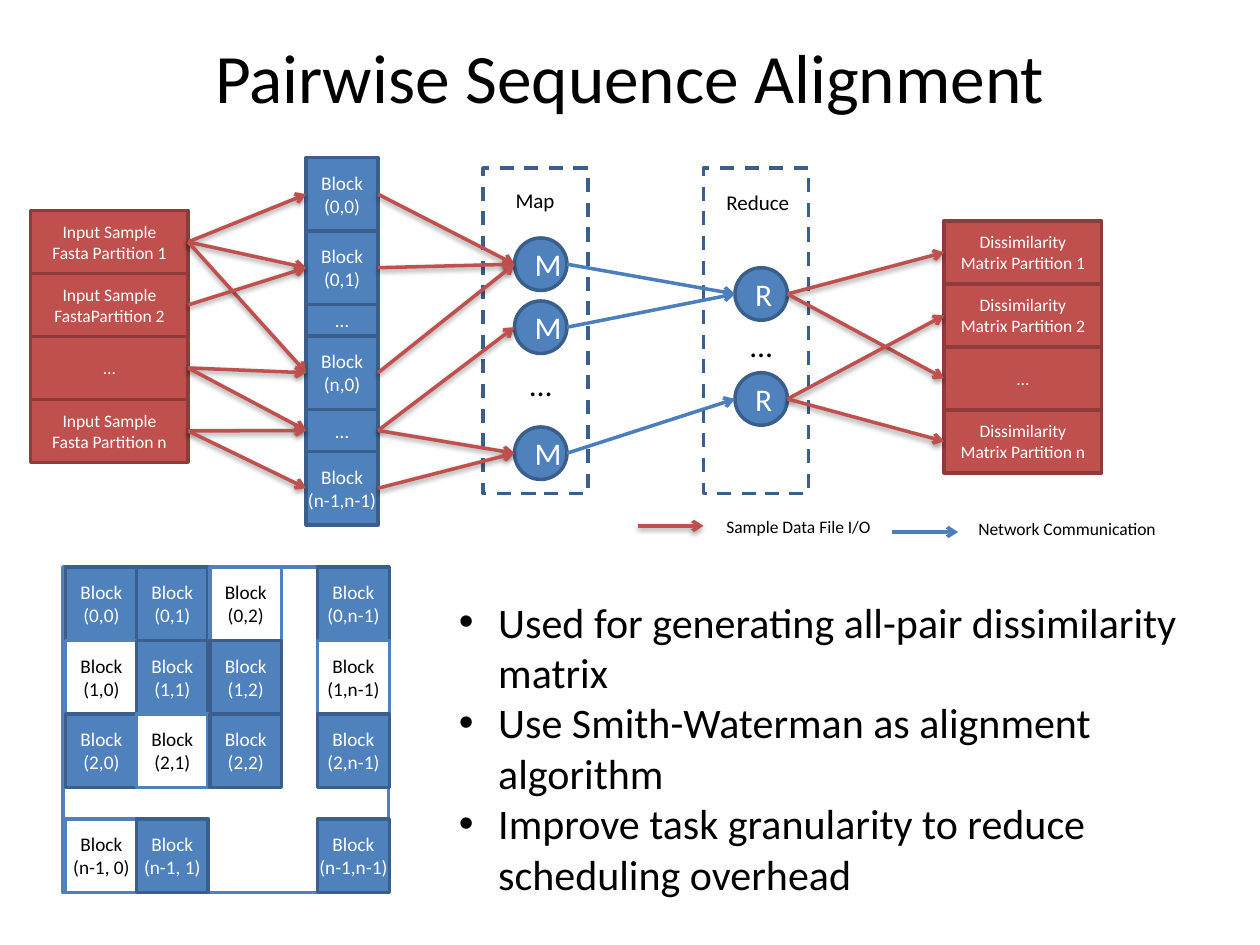
from dataclasses import dataclass

from lxml import etree
from pptx import Presentation
from pptx.dml.color import RGBColor
from pptx.enum.dml import MSO_LINE
from pptx.enum.shapes import MSO_CONNECTOR, MSO_SHAPE
from pptx.enum.text import MSO_ANCHOR, PP_ALIGN
from pptx.oxml import parse_xml
from pptx.oxml.ns import nsdecls, qn
from pptx.util import Pt

RECT, OVAL = MSO_SHAPE.RECTANGLE, MSO_SHAPE.OVAL
STRAIGHT, DASH = MSO_CONNECTOR.STRAIGHT, MSO_LINE.DASH
LEFT, CENTER = PP_ALIGN.LEFT, PP_ALIGN.CENTER
TOP, MIDDLE = MSO_ANCHOR.TOP, MSO_ANCHOR.MIDDLE


@dataclass(frozen=True)
class Theme:
    font: str = "Calibri"
    black: str = "000000"
    white: str = "FFFFFF"
    red: str = "C0504D"
    red_edge: str = "8E3B39"
    blue: str = "4F81BD"
    blue_edge: str = "3A5F8C"
    network: str = "4B7EBC"
    title: float = 39.6
    bullet: float = 24
    worker: float = 18
    stage: float = 12
    block: float = 11
    small: float = 10
    stroke: float = 2


theme = Theme()

SHADOW = (
    f'<a:effectLst {nsdecls("a")}><a:outerShdw blurRad="40000" dist="20000" '
    'dir="5400000" rotWithShape="0"><a:srgbClr val="000000">'
    '<a:alpha val="38000"/></a:srgbClr></a:outerShdw></a:effectLst>'
)

prs = Presentation()
prs.slide_width, prs.slide_height = Pt(720), Pt(540)
slide = prs.slides.add_slide(prs.slide_layouts[1])


def add_text(text, left, top, width, height, *, outline=None, fill=None, edge=None,
             dash=None, color=theme.white, size=theme.small, align=CENTER,
             anchor=MIDDLE, inset=(7.2, 3.6)):
    """Add text in a preset outline, or in a plain text box when outline is None."""
    box = [Pt(v) for v in (left, top, width, height)]
    if outline is None:
        shape = slide.shapes.add_textbox(*box)
    else:
        shape = slide.shapes.add_shape(outline, *box)
        shape.shadow.inherit = False
        shape.line.color.rgb = RGBColor.from_string(edge)
        shape.line.width = Pt(theme.stroke)
        shape.line.dash_style = dash
        if fill:
            shape.fill.solid()
            shape.fill.fore_color.rgb = RGBColor.from_string(fill)
        else:
            shape.fill.background()
    frame = shape.text_frame
    frame.word_wrap = True
    frame.vertical_anchor = anchor
    frame.margin_left = frame.margin_right = Pt(inset[0])
    frame.margin_top = frame.margin_bottom = Pt(inset[1])
    frame.text = text
    for paragraph in frame.paragraphs:
        paragraph.alignment = align
        paragraph.font.name = theme.font
        paragraph.font.size = Pt(size)
        paragraph.font.color.rgb = RGBColor.from_string(color)


def add_arrow(x1, y1, x2, y2, color, shadow=False):
    arrow = slide.shapes.add_connector(STRAIGHT, Pt(x1), Pt(y1), Pt(x2), Pt(y2))
    arrow.line.color.rgb = RGBColor.from_string(color)
    arrow.line.width = Pt(theme.stroke)
    etree.SubElement(arrow.line._get_or_add_ln(), qn("a:tailEnd"), type="arrow")
    effects = SHADOW if shadow else f'<a:effectLst {nsdecls("a")}/>'
    arrow._element.spPr.append(parse_xml(effects))


# Title and bullets
title = slide.shapes.title
title.left, title.top, title.width, title.height = Pt(36), Pt(18), Pt(648), Pt(50.4)
title.text_frame.text = "Pairwise Sequence Alignment"
title.text_frame.vertical_anchor = MIDDLE

bullets = slide.placeholders[1]
bullets.left, bullets.top = Pt(255), Pt(337)
bullets.width, bullets.height = Pt(433.5), Pt(181.5)
bullets.text_frame.text = "\n".join([
    "Used for generating all-pair dissimilarity matrix",
    "Use Smith-Waterman as alignment algorithm",
    "Improve task granularity to reduce scheduling overhead",
])
for paragraph in bullets.text_frame.paragraphs:
    paragraph.space_before = Pt(0)
    properties = paragraph._p.get_or_add_pPr()
    properties.set("marL", str(Pt(22.5)))
    properties.set("indent", str(-Pt(22.5)))
for placeholder, size in ((title, theme.title), (bullets, theme.bullet)):
    for paragraph in placeholder.text_frame.paragraphs:
        paragraph.font.name = theme.font
        paragraph.font.size = Pt(size)
        paragraph.font.color.rgb = RGBColor.from_string(theme.black)

# Input and output partitions
PARTITION_W, PARTITION_H = 90, 36
inputs_x, outputs_x = 17.5, 539.5
partitions = [
    (inputs_x, 120.25, ["Input Sample Fasta Partition 1", "Input Sample FastaPartition 2",
                        "…", "Input Sample Fasta Partition n"]),
    (outputs_x, 126.25, ["Dissimilarity Matrix Partition 1",
                         "Dissimilarity Matrix Partition 2",
                         "…", "Dissimilarity Matrix Partition n"]),
]
partition_y = []
for left, top, labels in partitions:
    tops = [top + i * PARTITION_H for i in range(len(labels))]
    partition_y.append([y + PARTITION_H / 2 for y in tops])
    for label, y in zip(labels, tops):
        add_text(label, left, y, PARTITION_W, PARTITION_H, outline=RECT,
                 fill=theme.red, edge=theme.red_edge)
input_y, output_y = partition_y

# Column of blocks fed to the map stage
BLOCK_W, BLOCK_H = 41, 42
blocks_x, next_top = 175, 90
block_y = []
for label, height in [("Block (0,0)", BLOCK_H), ("Block (0,1)", BLOCK_H), ("…", 18),
                      ("Block (n,0)", BLOCK_H), ("…", 24),
                      ("Block\n(n-1,n-1)", BLOCK_H)]:
    add_text(label, blocks_x, next_top, BLOCK_W, height, outline=RECT, fill=theme.blue,
             edge=theme.blue_edge, size=theme.block, inset=(0, 0))
    block_y.append(next_top + height / 2)
    next_top += height

# Map and reduce stages
WORKER = 30
map_x, reduce_x = 294, 420
map_y, reduce_y = [151, 187, 259], [168, 228]
for stage, label_x, label_y, letter, left, centers, gap_x, gap_y in [
    ("Map", 287.5, 103.5, "M", map_x, map_y, 288, 205),
    ("Reduce", 408, 105, "R", reduce_x, reduce_y, 414, 183),
]:
    add_text("", left - 18, 96, 60, 186, outline=RECT, edge=theme.blue_edge, dash=DASH)
    add_text(stage, label_x, label_y, 54, 21.5, color=theme.black, size=theme.stage,
             align=LEFT, anchor=TOP)
    for y in centers:
        add_text(letter, left, y - WORKER / 2, WORKER, WORKER, outline=OVAL,
                 fill=theme.blue, edge=theme.blue_edge, size=theme.worker)
    add_text("…", gap_x, gap_y, 42, 29, color=theme.black, size=theme.worker, anchor=TOP)

# Data flow: each pair is (index of sender, index of receiver)
flows = [
    (inputs_x + PARTITION_W, input_y, blocks_x, block_y, theme.red,
     [(0, 0), (0, 1), (0, 3), (1, 1), (2, 3), (2, 4), (3, 4), (3, 5)]),
    (blocks_x + BLOCK_W, block_y, map_x, map_y, theme.red,
     [(0, 0), (1, 0), (3, 0), (4, 1), (4, 2), (5, 2)]),
    (map_x + WORKER, map_y, reduce_x, reduce_y, theme.network,
     [(0, 0), (1, 0), (2, 1)]),
    (reduce_x + WORKER, reduce_y, outputs_x, output_y, theme.red,
     [(0, 0), (0, 2), (1, 1), (1, 3)]),
]
for start_x, start_y, end_x, end_y, color, pairs in flows:
    for sender, receiver in pairs:
        add_arrow(start_x, start_y[sender], end_x, end_y[receiver], color,
                  shadow=color == theme.red)

# Legend
for label, arrow_x, arrow_y, label_x, label_y, color in [
    ("Sample Data File I/O", 364.5, 300.5, 408, 291.5, theme.red),
    ("Network Communication", 510, 304, 552, 292.5, theme.network),
]:
    add_arrow(arrow_x, arrow_y, arrow_x + 37.5, arrow_y, color, shadow=color == theme.red)
    add_text(label, label_x, label_y, 132, 19.5, color=theme.black, align=LEFT, anchor=TOP)

# Block matrix: only the blue blocks are computed
add_text("", 36, 324, 186, 186, outline=RECT, fill=theme.white, edge=theme.blue)
column_x = [37.5, 78, 120, 181.5]
matrix = [
    (324, ["Block (0,0)", "Block (0,1)", "Block (0,2)", "Block (0,n-1)"], {2}),
    (366, ["Block (1,0)", "Block (1,1)", "Block (1,2)", "Block (1,n-1)"], {0, 3}),
    (408, ["Block (2,0)", "Block (2,1)", "Block (2,2)", "Block (2,n-1)"], {1}),
    (468, ["Block (n-1, 0)", "Block\n(n-1, 1)", None, "Block\n(n-1,n-1)"], {0}),
]
for top, labels, skipped in matrix:
    for column, (left, label) in enumerate(zip(column_x, labels)):
        if label is None:
            continue
        fill, edge, color = ((theme.white, theme.blue, theme.black) if column in skipped
                             else (theme.blue, theme.blue_edge, theme.white))
        add_text(label, left, top, BLOCK_W, BLOCK_H, outline=RECT, fill=fill, edge=edge,
                 color=color, size=theme.block, inset=(0, 0))

prs.save("out.pptx")
